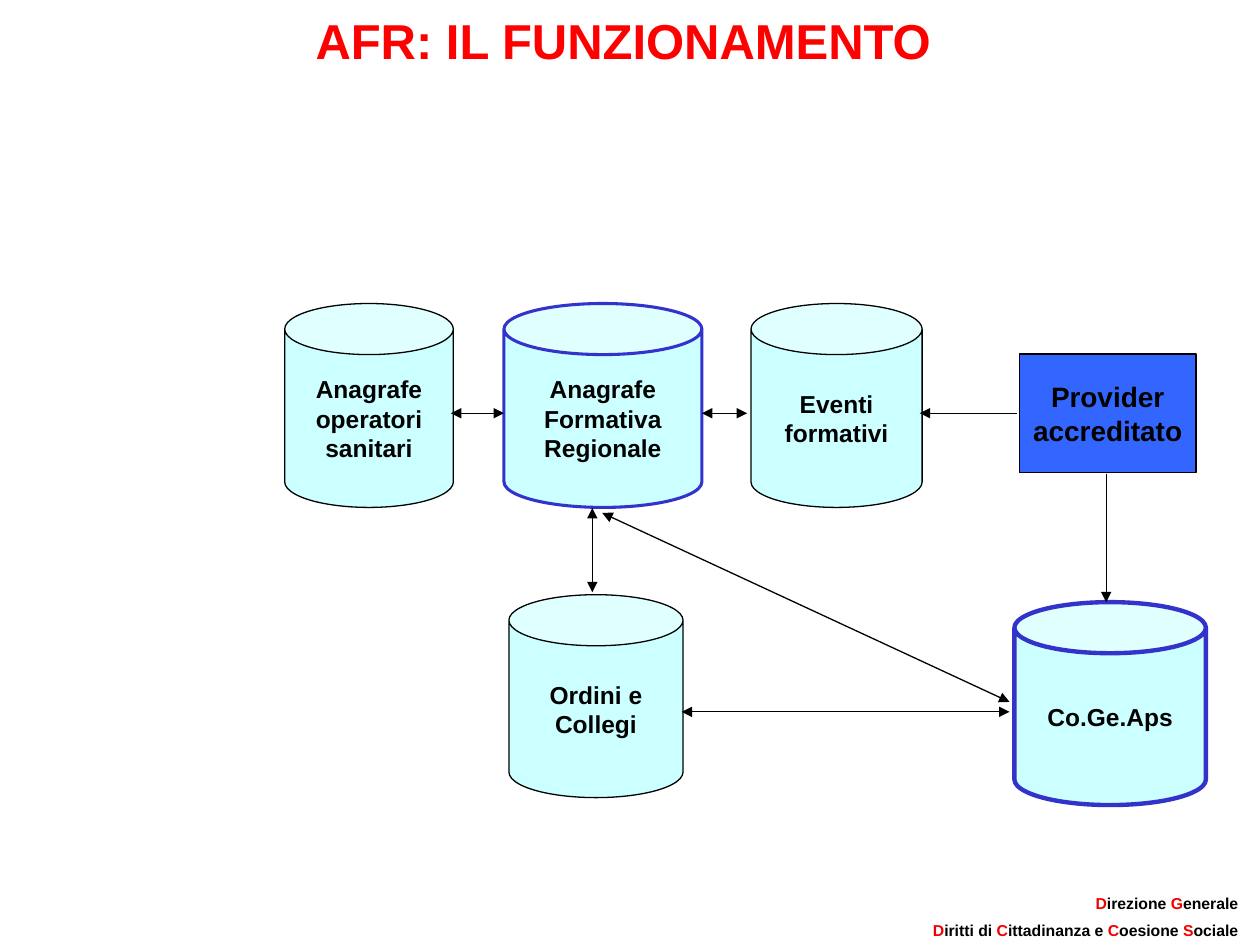
"""Build the slide on how the regional training registry (AFR) works."""
from lxml import etree
from pptx import Presentation
from pptx.dml.color import RGBColor
from pptx.enum.shapes import MSO_CONNECTOR, MSO_SHAPE
from pptx.enum.text import MSO_ANCHOR, PP_ALIGN
from pptx.oxml.ns import qn
from pptx.util import Cm, Pt

CAN, RECT = MSO_SHAPE.CAN, MSO_SHAPE.RECTANGLE
STRAIGHT = MSO_CONNECTOR.STRAIGHT
TOP, MIDDLE, BOTTOM = MSO_ANCHOR.TOP, MSO_ANCHOR.MIDDLE, MSO_ANCHOR.BOTTOM
CENTER, RIGHT = PP_ALIGN.CENTER, PP_ALIGN.RIGHT

THEME = {
    "font": "Arial",
    "black": "000000", "title": "FF0000", "initial": "F00000",
    "store": "CCFFFF", "provider": "3366FF", "accent": "3333CC",
    "title_size": 28, "provider_size": 16, "store_size": 14, "footer_size": 9,
    "line": 0.75,
}

TITLE = "AFR: IL FUNZIONAMENTO "
FOOTER = [
    [("D", "irezione "), ("G", "enerale ")],
    [("D", "iritti di "), ("C", "ittadinanza e "), ("C", "oesione "), ("S", "ociale ")],
]
RIM = 1.03
STORES = [
    (["Anagrafe", "operatori", "sanitari"], (5.74, 6.12, 3.4, 4.11), "black", 0.75),
    (["Anagrafe", "Formativa", "Regionale"], (10.16, 6.12, 3.99, 4.11), "accent", 1.75),
    (["Eventi", "formativi"], (15.14, 6.12, 3.45, 4.11), "black", 0.75),
    (["Ordini e", "Collegi"], (10.26, 11.99, 3.51, 4.09), "black", 0.75),
    (["Co.Ge.Aps"], (20.45, 12.14, 3.86, 4.09), "accent", 2.5),
]
PROVIDER = (["Provider", "accreditato"], (20.55, 7.14, 3.56, 2.39))
ONE_WAY, TWO_WAY = ("tailEnd",), ("headEnd", "tailEnd")
ARROWS = [
    ((20.5, 8.33), (18.54, 8.33), ONE_WAY),
    ((9.09, 8.33), (10.16, 8.33), TWO_WAY),
    ((14.15, 8.33), (15.06, 8.33), TWO_WAY),
    ((11.94, 10.24), (11.94, 11.94), TWO_WAY),
    ((22.3, 9.55), (22.3, 12.14), ONE_WAY),
    ((20.35, 14.35), (13.74, 14.35), TWO_WAY),
    ((12.14, 10.34), (20.35, 14.15), TWO_WAY),
]


def color(name):
    return RGBColor.from_string(THEME[name])


def write(sp, lines, size, align, anchor, wrap, spacing=None, before=0):
    tf = sp.text_frame
    tf.word_wrap = wrap
    tf.vertical_anchor = anchor
    for i, runs in enumerate(lines):
        p = tf.add_paragraph() if i else tf.paragraphs[0]
        p.alignment = align
        if spacing:
            p.line_spacing = spacing
        p.space_before = Pt(before if i else 0)
        for text, name in runs:
            r = p.add_run()
            r.text = text
            r.font.name = THEME["font"]
            r.font.size = Pt(THEME[size])
            r.font.bold = True
            r.font.color.rgb = color(name)


def add_text(s, box, *args):
    write(s.shapes.add_textbox(*map(Cm, box)), *args)


def add_node(s, kind, labels, box, fill, line, width, size):
    sp = s.shapes.add_shape(kind, *map(Cm, box))
    sp.shadow.inherit = False
    sp.fill.solid()
    sp.fill.fore_color.rgb = color(fill)
    sp.line.color.rgb = color(line)
    sp.line.width = Pt(width)
    write(sp, [[(label, "black")] for label in labels], size, CENTER, MIDDLE, False)
    return sp


def add_arrow(s, start, end, heads):
    c = s.shapes.add_connector(STRAIGHT, *map(Cm, start + end))
    c.line.color.rgb = color("black")
    c.line.width = Pt(THEME["line"])
    ln = c.line._get_or_add_ln()
    for head in heads:
        etree.SubElement(ln, qn(f"a:{head}"), type="triangle")
    etree.SubElement(c._element.spPr, qn("a:effectLst"))


def main():
    prs = Presentation()
    prs.slide_width, prs.slide_height = Cm(25.4), Cm(19.05)
    s = prs.slides.add_slide(prs.slide_layouts[6])

    footer = [
        [run for initial, rest in line for run in ((initial, "initial"), (rest, "black"))]
        for line in FOOTER
    ]
    add_text(s, (16.31, 17.93, 8.99, 1.68), footer, "footer_size", RIGHT, TOP, True, 0.9, 5.6)
    add_text(s, (0, -0.08, 25.4, 1.6), [[(TITLE, "title")]], "title_size", CENTER, BOTTOM, True)

    for labels, box, line, width in STORES:
        can = add_node(s, CAN, labels, box, "store", line, width, "store_size")
        can.adjustments[0] = RIM / min(box[2:])
    add_node(s, RECT, *PROVIDER, "provider", "black", THEME["line"], "provider_size")
    for arrow in ARROWS:
        add_arrow(s, *arrow)

    prs.save("out.pptx")


if __name__ == "__main__":
    main()
